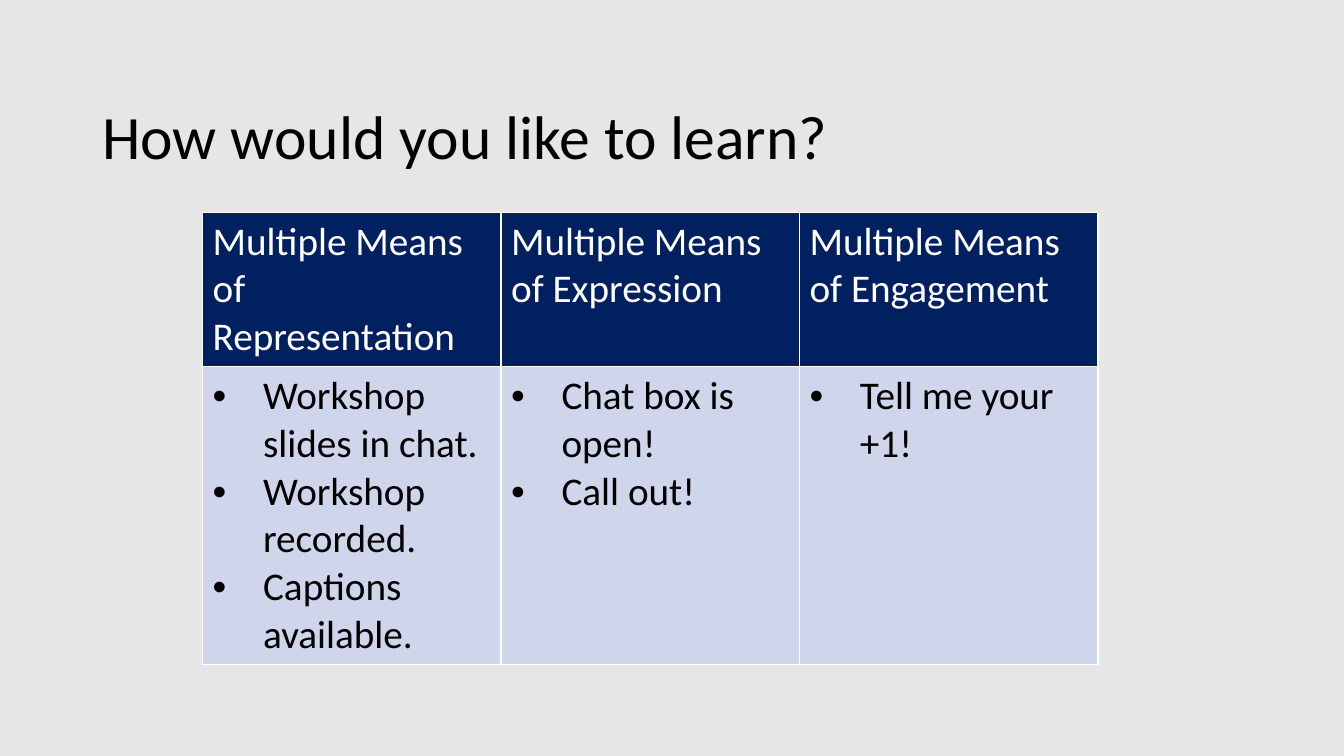
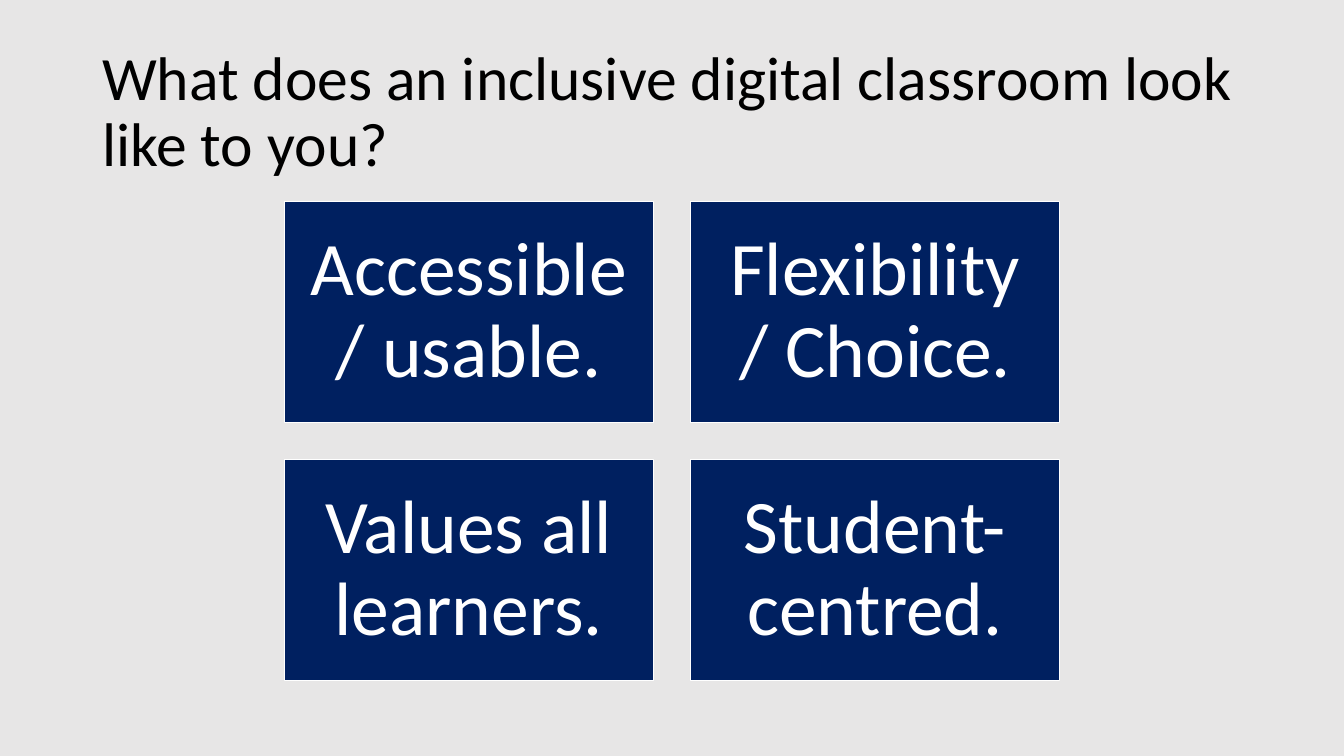
from lxml.etree import SubElement
from pptx import Presentation
from pptx.dml.color import RGBColor
from pptx.enum.shapes import MSO_SHAPE
from pptx.enum.text import MSO_ANCHOR, PP_ALIGN
from pptx.oxml.ns import qn
from pptx.util import Inches, Pt

# Content
LEARN_TITLE = "How would you like to learn?"
LEARN_COLUMNS = [
    ("Multiple Means of Representation",
     ["Workshop slides in chat.", "Workshop recorded.", "Captions available."]),
    ("Multiple Means of Expression", ["Chat box is open!", "Call out!"]),
    ("Multiple Means of Engagement", ["Tell me your +1!"]),
]
CLASSROOM_TITLE = "What does an inclusive digital classroom look like to you?"
CLASSROOM_TILES = [
    ["Accessible / usable.", "Flexibility / Choice."],
    ["Values all learners.", "Student-centred."],
]

# Shared style
FONT = "Calibri"
BACKGROUND, NAVY, PALE_BLUE = "E7E6E6", "002060", "CFD5EA"
WHITE, BLACK = "FFFFFF", "000000"
SLIDE_WIDTH, SLIDE_HEIGHT = 13.33, 7.5
TITLE_WIDTH, TITLE_HEIGHT = 11.5, 1.45

# Table and tile grids, in inches
TABLE_LEFT, TABLE_TOP, COLUMN_WIDTH = 2.01, 2.11, 2.96
ROW_HEIGHTS = [1.53, 2.95]
TILE_TOP, TILE_WIDTH, TILE_HEIGHT, TILE_GAP = 2, 3.66, 2.19, 0.37
TILE_INSET = 0.23


def color(hex_string):
    return RGBColor.from_string(hex_string)


def fill_solid(target, hex_string):
    target.fill.solid()
    target.fill.fore_color.rgb = color(hex_string)


def add_run(paragraph, text, size, hex_string):
    run = paragraph.add_run()
    run.text = text
    run.font.name = FONT
    run.font.size = Pt(size)
    run.font.bold = False
    run.font.color.rgb = color(hex_string)


def add_titled_slide(presentation, title, top):
    slide = presentation.slides.add_slide(presentation.slide_layouts[6])
    fill_solid(slide.background, BACKGROUND)
    left = (SLIDE_WIDTH - TITLE_WIDTH) / 2
    box = slide.shapes.add_textbox(Inches(left), Inches(top),
                                   Inches(TITLE_WIDTH), Inches(TITLE_HEIGHT))
    frame = box.text_frame
    frame.word_wrap = True
    frame.vertical_anchor = MSO_ANCHOR.MIDDLE
    frame.paragraphs[0].line_spacing = 0.9
    add_run(frame.paragraphs[0], title, 44, BLACK)
    return slide


def add_bullet(paragraph):
    properties = paragraph._p.get_or_add_pPr()
    properties.set("marL", str(Inches(0.5)))
    properties.set("indent", str(-Inches(0.5)))
    SubElement(properties, qn("a:buFont")).set("typeface", "Arial")
    SubElement(properties, qn("a:buChar")).set("char", "•")


def style_cell(cell, hex_string):
    # Borders come before the fill in the cell properties
    properties = cell._tc.get_or_add_tcPr()
    for side in ("lnL", "lnR", "lnT", "lnB"):
        line = SubElement(properties, qn("a:" + side), w=str(Pt(1)))
        solid = SubElement(line, qn("a:solidFill"))
        SubElement(solid, qn("a:srgbClr")).set("val", WHITE)
    fill_solid(cell, hex_string)


def add_learning_table(slide):
    count = len(LEARN_COLUMNS)
    table = slide.shapes.add_table(
        len(ROW_HEIGHTS), count, Inches(TABLE_LEFT), Inches(TABLE_TOP),
        Inches(COLUMN_WIDTH * count), Inches(sum(ROW_HEIGHTS))).table
    for row, height in zip(table.rows, ROW_HEIGHTS):
        row.height = Inches(height)
    for index, (heading, points) in enumerate(LEARN_COLUMNS):
        table.columns[index].width = Inches(COLUMN_WIDTH)
        header, body = table.cell(0, index), table.cell(1, index)
        style_cell(header, NAVY)
        add_run(header.text_frame.paragraphs[0], heading, 28, WHITE)
        style_cell(body, PALE_BLUE)
        frame = body.text_frame
        for number, point in enumerate(points):
            paragraph = frame.add_paragraph() if number else frame.paragraphs[0]
            add_bullet(paragraph)
            add_run(paragraph, point, 28, BLACK)


def add_tile(slide, text, left, top):
    tile = slide.shapes.add_shape(MSO_SHAPE.RECTANGLE, Inches(left), Inches(top),
                                  Inches(TILE_WIDTH), Inches(TILE_HEIGHT))
    tile.shadow.inherit = False
    fill_solid(tile, NAVY)
    tile.line.color.rgb = color(WHITE)
    tile.line.width = Pt(1)
    frame = tile.text_frame
    frame.word_wrap = True
    frame.vertical_anchor = MSO_ANCHOR.MIDDLE
    frame.margin_left = frame.margin_right = Inches(TILE_INSET)
    frame.margin_top = frame.margin_bottom = Inches(TILE_INSET)
    paragraph = frame.paragraphs[0]
    paragraph.alignment = PP_ALIGN.CENTER
    paragraph.line_spacing = 0.9
    add_run(paragraph, text, 54, WHITE)


def add_tile_grid(slide):
    columns = len(CLASSROOM_TILES[0])
    grid_width = columns * TILE_WIDTH + (columns - 1) * TILE_GAP
    grid_left = (SLIDE_WIDTH - grid_width) / 2
    for row, texts in enumerate(CLASSROOM_TILES):
        for column, text in enumerate(texts):
            add_tile(slide, text,
                     grid_left + column * (TILE_WIDTH + TILE_GAP),
                     TILE_TOP + row * (TILE_HEIGHT + TILE_GAP))


def main():
    presentation = Presentation()
    presentation.slide_width = Inches(SLIDE_WIDTH)
    presentation.slide_height = Inches(SLIDE_HEIGHT)
    add_learning_table(add_titled_slide(presentation, LEARN_TITLE, 0.66))
    add_tile_grid(add_titled_slide(presentation, CLASSROOM_TITLE, 0.4))
    presentation.save("out.pptx")


if __name__ == "__main__":
    main()
